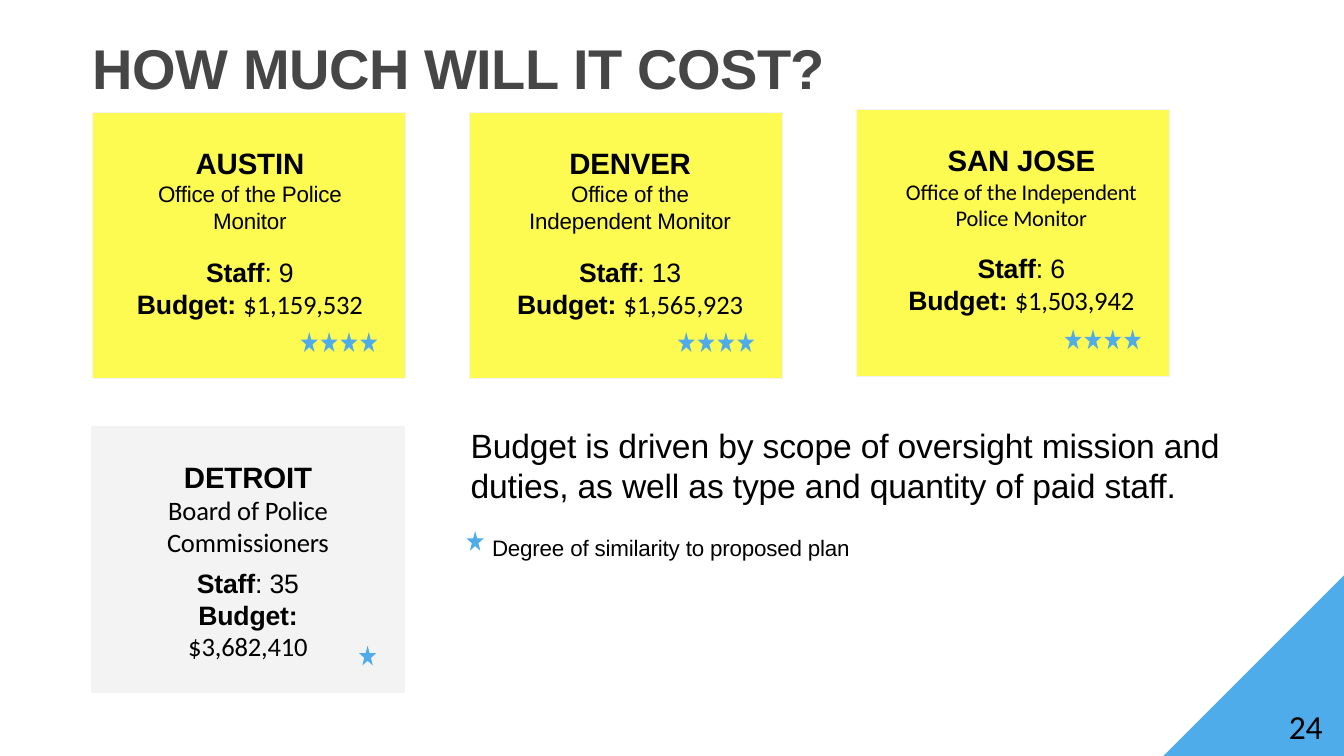
from pptx import Presentation
from pptx.dml.color import RGBColor
from pptx.enum import shapes, text
from pptx.util import Cm, Pt

HUES = {"blue": "4EACEA", "yellow": "FDFA52", "gray": "F3F3F3",
        "title": "464646", "black": "000000"}
CARD_W, CARD_H = 7.89, 6.71
STAR_W, STAR_H, STAR_STEP = 0.43, 0.5, 0.5

# name, office, office font, office size, staff, budget, stars,
# left, top, fill, text middle, text width, gap above staff
CARDS = [
    ("AUSTIN", "Office of the Police Monitor", "Arial", 16, "9",
     "$1,159,532", 4, 2.33, 2.84, "yellow", 6.3, 6, 16),
    ("DENVER", "Office of the Independent Monitor", "Arial", 16, "13",
     "$1,565,923", 4, 11.83, 2.84, "yellow", 15.88, 6, 16),
    ("SAN JOSE", "Office of the Independent Police Monitor", "Calibri", 16,
     "6", "$1,503,942", 4, 21.58, 2.77, "yellow", 25.74, 6, 15),
    ("DETROIT", "Board of Police Commissioners", "Calibri", 19, "35",
     "$3,682,410", 1, 2.3, 10.74, "gray", 6.25, 5, 6.9),
]


def rgb(hue):
    return RGBColor.from_string(HUES[hue])


def style(run, size, face="Arial", bold=False, hue="black", track=-10):
    """Format a run; track is letter spacing in hundredths of a point."""
    font = run.font
    font.size, font.name, font.bold = Pt(size), face, bold
    font.color.rgb = rgb(hue)
    run._r.get_or_add_rPr().set("spc", str(track))


def paint(shape, hue):
    shape.shadow.inherit = False
    shape.fill.solid()
    shape.fill.fore_color.rgb = rgb(hue)
    shape.line.fill.background()


def setup(frame, left=0, top=0, right=0):
    """Wrap text from the top with the given insets."""
    frame.word_wrap = True
    frame.auto_size = text.MSO_AUTO_SIZE.NONE
    frame.vertical_anchor = text.MSO_ANCHOR.TOP
    frame.margin_left, frame.margin_top = Cm(left), Cm(top)
    frame.margin_right, frame.margin_bottom = Cm(right), 0


def add_title(slide, words):
    title = slide.shapes.title
    title.left, title.top = Cm(2.34), Cm(0.85)
    title.width, title.height = Cm(22), Cm(1.6)
    setup(title.text_frame)
    title.text_frame.text = words
    para = title.text_frame.paragraphs[0]
    para.alignment = text.PP_ALIGN.LEFT
    style(para.runs[0], 40, bold=True, hue="title", track=-30)


def add_note(slide, words, left, top, width, height, size, face="Arial"):
    box = slide.shapes.add_textbox(Cm(left), Cm(top), Cm(width), Cm(height))
    setup(box.text_frame)
    box.text_frame.text = words
    style(box.text_frame.paragraphs[0].runs[0], size, face)


def add_star(slide, left, top):
    star = slide.shapes.add_shape(shapes.MSO_SHAPE.STAR_5_POINT, Cm(left),
                                  Cm(top), Cm(STAR_W), Cm(STAR_H))
    paint(star, "blue")


def add_line(para, parts, pitch=None, gap=0):
    """Fill a centred paragraph with (words, size, face, bold) runs."""
    para.alignment = text.PP_ALIGN.CENTER
    para.space_before = Pt(gap)
    if pitch:
        para.line_spacing = Pt(pitch)
    for words, size, face, bold in parts:
        run = para.add_run()
        run.text = words
        style(run, size, face, bold)


def add_card(slide, name, office, face, size, staff, cost, stars,
             left, top, fill, mid, width, gap):
    card = slide.shapes.add_shape(shapes.MSO_SHAPE.RECTANGLE, Cm(left),
                                  Cm(top), Cm(CARD_W), Cm(CARD_H))
    paint(card, fill)
    card.line.color.rgb = rgb("gray")
    card.line.width = Pt(0.72)
    inset = mid - width / 2 - left
    frame = card.text_frame
    setup(frame, inset, 0.82, CARD_W - inset - width)
    add_line(frame.paragraphs[0], [(name, 21, "Arial", True)])
    add_line(frame.add_paragraph(), [(office, size, face, False)],
             22.9 if size == 19 else None)
    add_line(frame.add_paragraph(), [("Staff", 19, "Arial", True),
                                     (": " + staff, 19, "Arial", False)],
             22.5, gap)
    add_line(frame.add_paragraph(), [("Budget: ", 19, "Arial", True),
                                     (cost, 19, "Calibri", False)], 22.5)
    for i in range(stars):
        add_star(slide, left + 6.75 - i * STAR_STEP, top + 5.53)


def add_corner(slide, wide, high, side):
    pen = slide.shapes.build_freeform(Cm(wide), Cm(high - side))
    pen.add_line_segments([(Cm(wide - side), Cm(high)), (Cm(wide), Cm(high))])
    paint(pen.convert_to_shape(), "blue")


def main():
    deck = Presentation()
    deck.slide_width, deck.slide_height = Cm(33.87), Cm(19.05)
    slide = deck.slides.add_slide(deck.slide_layouts[5])
    add_corner(slide, 33.87, 19.05, 4.55)
    add_title(slide, "HOW MUCH WILL IT COST?")
    for card in CARDS:
        add_card(slide, *card)
    add_note(slide, "Budget is driven by scope of oversight mission and "
             "duties, as well as type and quantity of paid staff.",
             11.86, 10.7, 19.5, 2.1, 24)
    add_star(slide, 11.76, 13.38)
    add_note(slide, "Degree of similarity to proposed plan",
             12.4, 13.45, 12, 0.8, 16)
    add_note(slide, "24", 32.48, 17.8, 1.2, 1, 24, "Calibri")
    deck.save("out.pptx")


if __name__ == "__main__":
    main()
